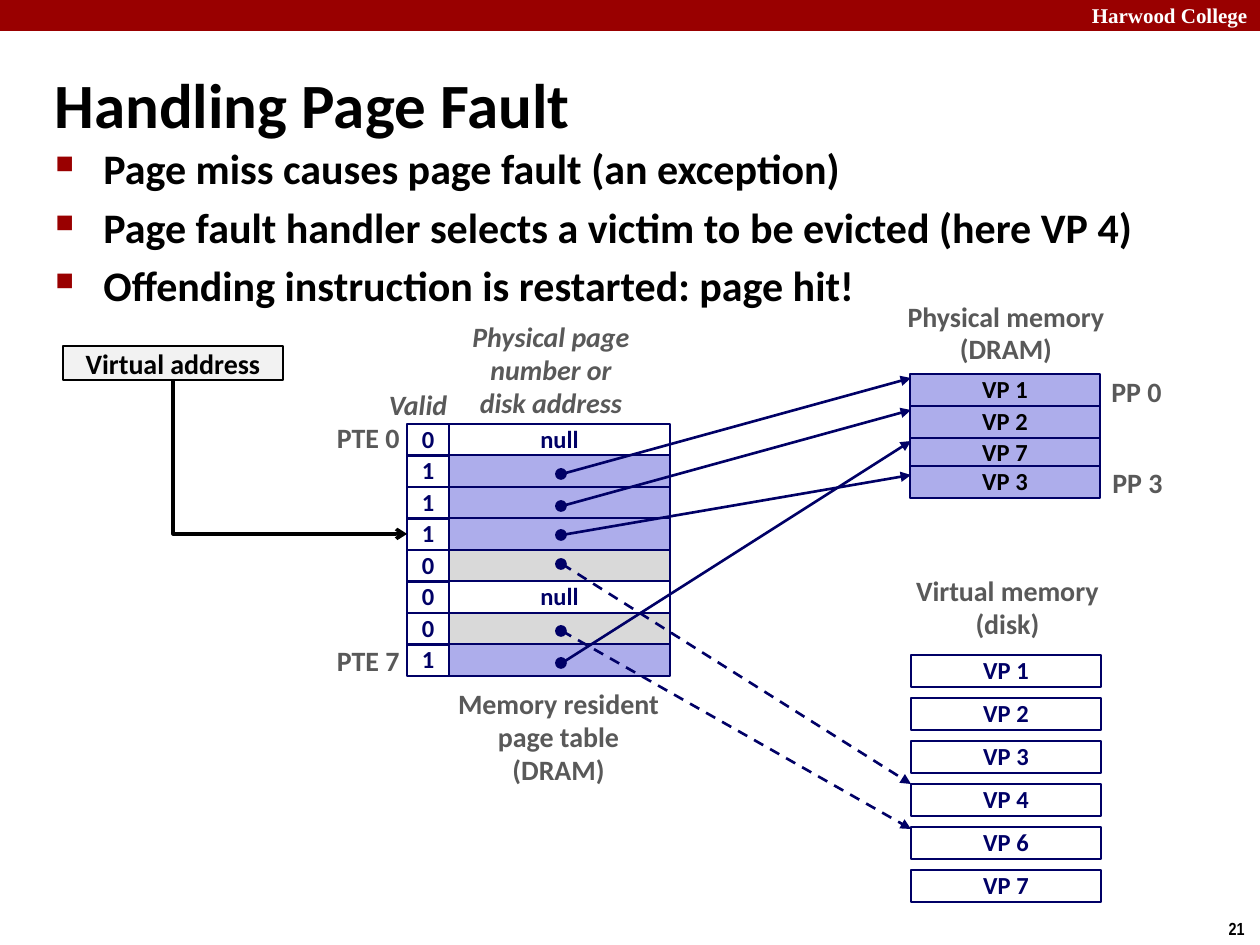
from dataclasses import dataclass
from typing import Optional

import lxml.etree
import pptx
import pptx.dml.color
import pptx.enum.dml
import pptx.enum.shapes
import pptx.enum.text
import pptx.oxml
import pptx.oxml.ns
import pptx.util

EMU_PER_PX = 914400 / 126
NAVY, LILAC, GRAY, WHITE = "000066", "ADADEB", "D9D9D9", "FFFFFF"
BLACK, RED, LABEL_GRAY = "000000", "990000", "595959"
ALIGN = pptx.enum.text.PP_ALIGN
ANCHOR = pptx.enum.text.MSO_ANCHOR
SHAPE = pptx.enum.shapes.MSO_SHAPE
CONNECTOR = pptx.enum.shapes.MSO_CONNECTOR


@dataclass
class TextStyle:
    size: int
    color: str
    italic: bool = False
    font: str = "Calibri"
    align: ALIGN = ALIGN.CENTER
    anchor: ANCHOR = ANCHOR.MIDDLE
    spacing: Optional[float] = 0.98


@dataclass
class Label:
    text: str
    left: int
    top: int
    width: int
    height: int
    style: TextStyle


@dataclass
class PageTableEntry:
    valid: str
    fill: str
    text: str = ""


@dataclass
class Mapping:
    dot_y: int
    target_y: int
    dashed: bool = False


def px(length: float) -> pptx.util.Emu:
    return pptx.util.Emu(round(length * EMU_PER_PX))


def rgb(color: str) -> pptx.dml.color.RGBColor:
    return pptx.dml.color.RGBColor.from_string(color)


def write(shape, text: str, style: TextStyle, wrap: bool = False) -> None:
    frame = shape.text_frame
    frame.text = text
    frame.word_wrap = wrap
    frame.vertical_anchor = style.anchor
    for paragraph in frame.paragraphs:
        paragraph.alignment = style.align
        paragraph.line_spacing = style.spacing
        font = paragraph.font
        font.name = style.font
        font.size = pptx.util.Pt(style.size)
        font.bold = True
        font.italic = style.italic
        font.color.rgb = rgb(style.color)


def add_label(slide, label: Label):
    shape = slide.shapes.add_textbox(px(label.left), px(label.top), px(label.width), px(label.height))
    write(shape, label.text, label.style)
    return shape


def add_box(slide, left: int, top: int, width: int, height: int, fill: Optional[str],
            line: Optional[str] = NAVY, weight: float = 1.5, kind=SHAPE.RECTANGLE):
    shape = slide.shapes.add_shape(kind, px(left), px(top), px(width), px(height))
    shape.shadow.inherit = False
    if fill:
        shape.fill.solid()
        shape.fill.fore_color.rgb = rgb(fill)
    else:
        shape.fill.background()
    if line:
        shape.line.color.rgb = rgb(line)
        shape.line.width = pptx.util.Pt(weight)
    else:
        shape.line.fill.background()
    return shape


def add_arrow(slide, kind, start: tuple, end: tuple, color: str, weight: float, head: str):
    connector = slide.shapes.add_connector(kind, *(px(value) for value in start + end))
    connector.line.color.rgb = rgb(color)
    connector.line.width = pptx.util.Pt(weight)
    line = connector.line._get_or_add_ln()
    lxml.etree.SubElement(line, pptx.oxml.ns.qn("a:tailEnd"), type=head)
    lxml.etree.SubElement(connector._element.spPr, pptx.oxml.ns.qn("a:effectLst"))
    return connector


def add_mapping(slide, mapping: Mapping) -> None:
    arrow = add_arrow(slide, CONNECTOR.STRAIGHT, (562, mapping.dot_y), (911, mapping.target_y),
                      NAVY, 1.5, "triangle")
    if mapping.dashed:
        arrow.line.dash_style = pptx.enum.dml.MSO_LINE.DASH
    add_box(slide, 556, mapping.dot_y - 5, 10, 10, NAVY, weight=1, kind=SHAPE.OVAL)


def add_bullets(slide, items: list) -> None:
    shape = slide.shapes.add_textbox(px(43), px(136), px(1145), px(180))
    write(shape, "\n".join(items),
          TextStyle(24, BLACK, align=ALIGN.LEFT, anchor=ANCHOR.TOP, spacing=None), wrap=True)
    for paragraph in shape.text_frame.paragraphs:
        paragraph.space_before = pptx.util.Pt(4.8)
        properties = paragraph._p.get_or_add_pPr()
        properties.set("marL", str(px(48)))
        properties.set("indent", str(-px(48)))
        bullet = pptx.oxml.parse_xml(
            f'<a:pPr {pptx.oxml.ns.nsdecls("a")}><a:buClr><a:srgbClr val="{RED}"/></a:buClr>'
            '<a:buSzPct val="60000"/><a:buChar char="■"/></a:pPr>')
        default_font = properties.find(pptx.oxml.ns.qn("a:defRPr"))
        for element in list(bullet):
            default_font.addprevious(element)


def add_address_arrow(slide, address, entry) -> None:
    start, end = (173, 380), (407, 534)
    arrow = add_arrow(slide, CONNECTOR.ELBOW, start, end, BLACK, 2, "arrow")
    arrow.begin_connect(address, 2)
    arrow.end_connect(entry, 1)
    across, down = end[0] - start[0], end[1] - start[1]
    arrow.left = px(start[0] + (across - down) / 2)
    arrow.top = px(start[1] + (down - across) / 2)
    arrow.width, arrow.height = px(down), px(across)
    properties = arrow._element.spPr
    transform = properties.find(pptx.oxml.ns.qn("a:xfrm"))
    transform.set("rot", "16200000")
    transform.set("flipH", "1")
    properties.find(pptx.oxml.ns.qn("a:prstGeom")).set("prst", "bentConnector2")


def main() -> None:
    presentation = pptx.Presentation()
    presentation.slide_width, presentation.slide_height = px(1260), px(945)
    slide = presentation.slides.add_slide(presentation.slide_layouts[5])

    title = slide.shapes.title
    title.left, title.top, title.width, title.height = px(42), px(49), px(1142), px(108)
    write(title, "Handling Page Fault", TextStyle(36, BLACK, align=ALIGN.LEFT, spacing=None), wrap=True)

    add_box(slide, 0, 0, 1260, 31, RED, line=None)
    add_bullets(slide, [
        "Page miss causes page fault (an exception)",
        "Page fault handler selects a victim to be evicted (here VP 4)",
        "Offending instruction is restarted: page hit!",
    ])

    caption = TextStyle(16, LABEL_GRAY)
    heading = TextStyle(16, LABEL_GRAY, italic=True)
    row_label = TextStyle(16, LABEL_GRAY, align=ALIGN.RIGHT)
    for label in [
        Label("Harwood College", 1020, 0, 240, 31,
              TextStyle(12, WHITE, font="Times New Roman", align=ALIGN.RIGHT, spacing=None)),
        Label("21", 1215, 911, 43, 34, TextStyle(10, BLACK, font="Arial Narrow", spacing=None)),
        Label("Physical page\nnumber or\ndisk address", 459, 315, 184, 112, heading),
        Label("Valid", 371, 382, 94, 47, heading),
        Label("PTE 0", 324, 415, 88, 47, row_label),
        Label("PTE 7", 324, 638, 88, 47, row_label),
        Label("Memory resident\npage table\n(DRAM)", 442, 682, 233, 112, caption),
        Label("Physical memory\n(DRAM)", 894, 294, 224, 79, caption),
        Label("Virtual memory\n(disk)", 901, 569, 213, 79, caption),
        Label("PP 0", 1099, 369, 75, 47, caption),
        Label("PP 3", 1100, 460, 75, 47, caption),
    ]:
        add_label(slide, label)

    navy_text, black_text = TextStyle(14, NAVY), TextStyle(14, BLACK)
    entries = [
        PageTableEntry("0", WHITE, "null"), PageTableEntry("1", LILAC),
        PageTableEntry("1", LILAC), PageTableEntry("1", LILAC),
        PageTableEntry("0", GRAY), PageTableEntry("0", WHITE, "null"),
        PageTableEntry("0", GRAY), PageTableEntry("1", LILAC),
    ]
    valid_cells = []
    for row, entry in enumerate(entries):
        top = 424 + 63 * row // 2
        valid_cell = add_box(slide, 407, top, 42, 32, None)
        write(valid_cell, entry.valid, navy_text)
        valid_cells.append(valid_cell)
        address_cell = add_box(slide, 449, top, 221, 32, entry.fill)
        if entry.text:
            write(address_cell, entry.text, navy_text)

    for name, top in [("VP 7", 437), ("VP 3", 466), ("VP 2", 406), ("VP 1", 374)]:
        write(add_box(slide, 910, top, 190, 32, LILAC), name, black_text)
    for row, number in enumerate([1, 2, 3, 4, 6, 7]):
        write(add_box(slide, 911, 655 + 43 * row, 190, 32, WHITE), f"VP {number}", navy_text)

    for mapping in [
        Mapping(474, 378), Mapping(506, 410), Mapping(535, 475),
        Mapping(564, 784, dashed=True), Mapping(631, 829, dashed=True), Mapping(663, 441),
    ]:
        add_mapping(slide, mapping)

    address = add_box(slide, 63, 346, 220, 34, "F2F2F2", BLACK, 1)
    write(address, "Virtual address", TextStyle(16, BLACK, spacing=None))
    add_address_arrow(slide, address, valid_cells[3])

    presentation.save("out.pptx")


if __name__ == "__main__":
    main()
